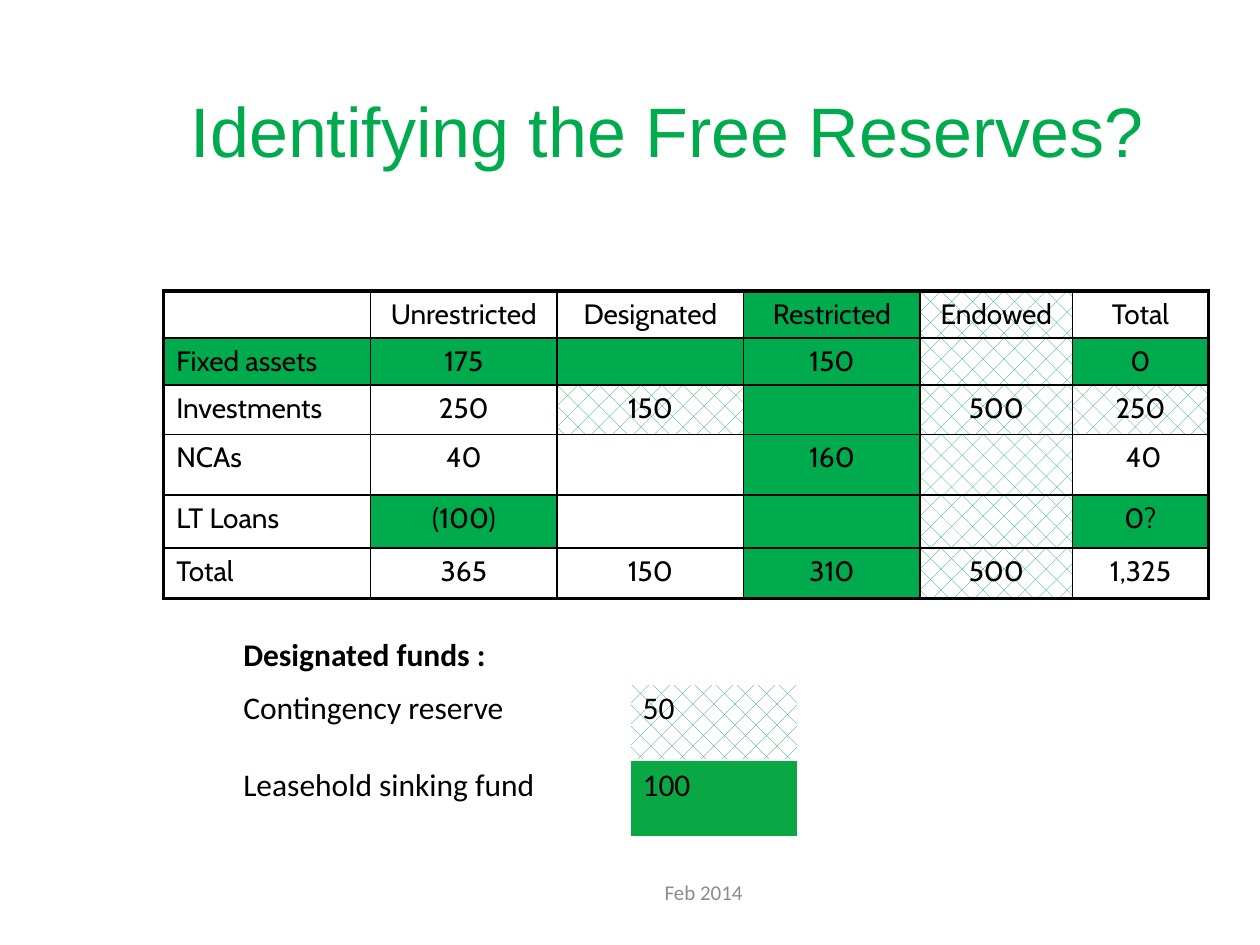
import pptx
import pptx.util
import pptx.dml.color
import pptx.enum.dml
import pptx.enum.text
import pptx.oxml.ns
from lxml import etree

Cm, Pt = pptx.util.Cm, pptx.util.Pt
RGB = pptx.dml.color.RGBColor.from_string
PP_ALIGN = pptx.enum.text.PP_ALIGN
MIDDLE = pptx.enum.text.MSO_ANCHOR.MIDDLE
qn = pptx.oxml.ns.qn

COLORS = {"green": "00AB4E", "deep": "0AA745", "black": "000000",
          "white": "FFFFFF", "grey": "8C8C8C"}
# Fill codes: lower case is solid, upper case is a dotted diamond pattern
FILLS = {"g": "green", "d": "deep"}


def add_run(p, text, font, size, color, bold=False):
    r = p.add_run()
    r.text = text
    r.font.name, r.font.size, r.font.bold = font, Pt(size), bold
    r.font.color.rgb = RGB(COLORS[color])


def add_grid(s, left, top, cols, rows, texts, fills, font, size,
             line, outer=1, under_head=1, centred=False, bold_head=False):
    """Add a table whose fills holds one code letter per cell, "." for none."""
    frame = s.shapes.add_table(len(rows), len(cols), Cm(left), Cm(top),
                               Cm(sum(cols)), Cm(sum(rows)))
    tbl = frame.table
    tbl.first_row = tbl.horz_banding = False
    for col, width in zip(tbl.columns, cols):
        col.width = Cm(width)
    for i, height in enumerate(rows):
        tbl.rows[i].height = Cm(height)
        for j, text in enumerate(texts[i]):
            cell = tbl.cell(i, j)
            p = cell.text_frame.paragraphs[0]
            if centred and j:
                p.alignment = PP_ALIGN.CENTER
            if text:
                add_run(p, text, font, size, line if line == "black" else "black",
                        bold_head and i == 0)
            else:
                etree.SubElement(p._p, qn("a:endParaRPr"), sz=str(size * 100))

            widths = {
                "a:lnL": outer if j == 0 else 1,
                "a:lnR": outer if j == len(cols) - 1 else 1,
                "a:lnT": outer if i == 0 else under_head if i == 1 else 1,
                "a:lnB": under_head if i == 0 else outer if i == len(rows) - 1 else 1,
            }
            tcPr = cell._tc.get_or_add_tcPr()
            for tag, width in widths.items():
                ln = etree.SubElement(tcPr, qn(tag), w=str(Pt(width)))
                solid = etree.SubElement(ln, qn("a:solidFill"))
                etree.SubElement(solid, qn("a:srgbClr"), val=COLORS[line])

            code = fills[i][j]
            if code == ".":
                cell.fill.background()
                continue
            color = RGB(COLORS[FILLS[code.lower()]])
            if code.isupper():
                cell.fill.patterned()
                cell.fill.pattern = pptx.enum.dml.MSO_PATTERN.DOTTED_DIAMOND
                cell.fill.fore_color.rgb = color
                cell.fill.back_color.rgb = RGB(COLORS["white"])
            else:
                cell.fill.solid()
                cell.fill.fore_color.rgb = color


prs = pptx.Presentation()
prs.slide_width, prs.slide_height = Cm(25.4), Cm(19.05)
s = prs.slides.add_slide(prs.slide_layouts[5])

# Title
sp = s.shapes.title
sp.left, sp.top, sp.width, sp.height = Cm(3.2), Cm(0.58), Cm(21.64), Cm(4.06)
tf = sp.text_frame
tf.vertical_anchor = MIDDLE
p = tf.paragraphs[0]
p.alignment = PP_ALIGN.LEFT
add_run(p, " ", "Arial", 40, "black")
add_run(p, "Identifying the Free Reserves?", "Arial", 40, "green")

# Reserves by fund
add_grid(
    s, 3.3, 5.87,
    cols=[4.17, 3.76, 3.76, 3.56, 3.07, 2.74],
    rows=[0.94, 0.94, 1, 1.22, 1.07, 1.02],
    texts=[
        ["", "Unrestricted", "Designated", "Restricted", "Endowed", "Total"],
        ["Fixed assets", "175", "", "150", "", "0"],
        ["Investments", "250", "150", "", "500", "250"],
        ["NCAs", "40", "", "160", "", " 40"],
        ["LT Loans", "(100)", "", "", "", "0?"],
        ["Total", "365", "150", "310", "500", "1,325"],
    ],
    fills=["...gG.", "ggggGg", "..DgGD", "...gG.", ".g.gGg", "...gG."],
    font="Cabin", size=16, line="black", outer=2.25, centred=True)

# Designated funds
add_grid(
    s, 4.65, 12.7,
    cols=[8.05, 3.38],
    rows=[1.07, 1.55, 1.55],
    texts=[["Designated funds :", ""],
           ["Contingency reserve", "50"],
           ["Leasehold sinking fund", "100"]],
    fills=["..", ".D", ".d"],
    font="Calibri", size=18, line="white", under_head=3, bold_head=True)

# Date
sp = s.shapes.add_textbox(Cm(10.16), Cm(17.35), Cm(8.05), Cm(1.27))
tf = sp.text_frame
tf.word_wrap = True
tf.vertical_anchor = MIDDLE
p = tf.paragraphs[0]
p.alignment = PP_ALIGN.CENTER
add_run(p, "Feb 2014", "Calibri", 12, "grey")

prs.save("out.pptx")
